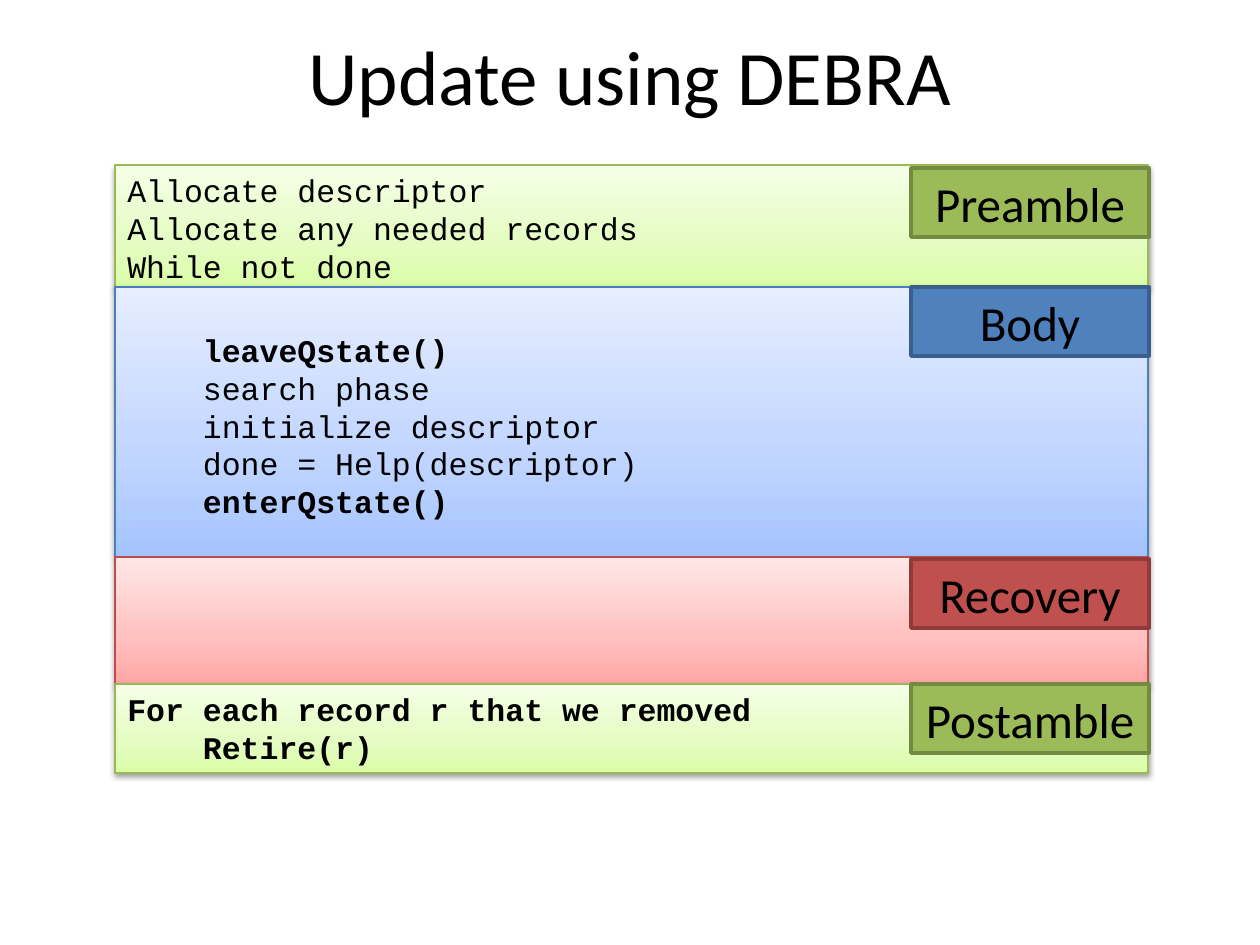
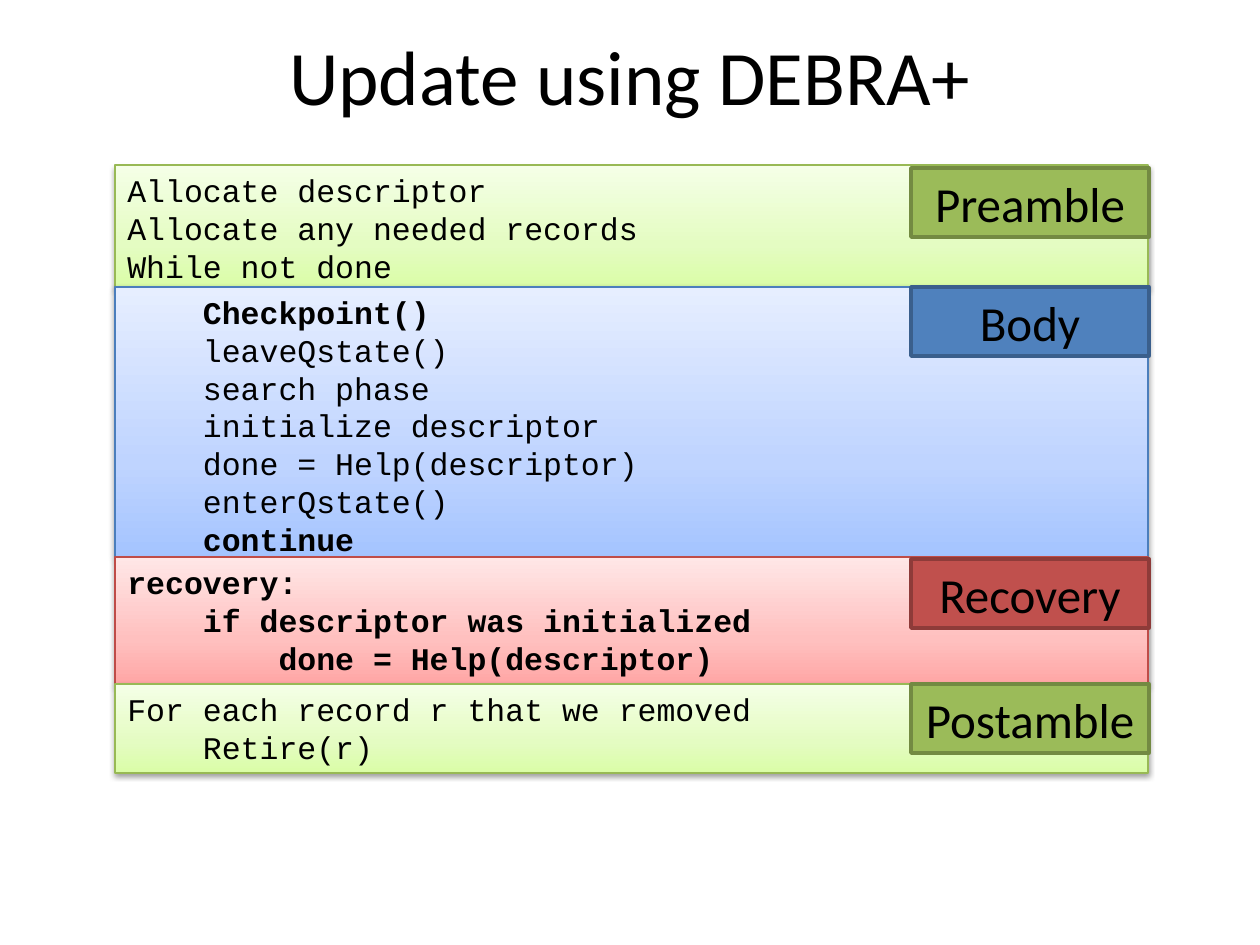
from copy import deepcopy
from typing import NamedTuple

from lxml.etree import SubElement
from pptx import Presentation
from pptx.dml.color import RGBColor
from pptx.enum.shapes import MSO_SHAPE as Preset
from pptx.enum.text import MSO_ANCHOR as Anchor, PP_ALIGN as Align
from pptx.oxml.ns import qn
from pptx.util import Emu, Pt

PX = 914400 / 126
BLACK = RGBColor(0x00, 0x00, 0x00)
TITLE_FONT = "Calibri"
CODE_FONT = "Courier New"
CODE_SIZE = 18
CODE_INDENT = Pt(4 * 0.6 * CODE_SIZE)  # four characters of the code font
CODE_LINE_HEIGHT = 38
CODE_PADDING = 6

BAND_LEFT, BAND_TOP, BAND_WIDTH = 115, 165, 1033
TAG_LEFT, TAG_WIDTH, TAG_HEIGHT = 911, 238, 69
GRADIENT_POSITIONS = (0, 0.35, 1)


class Palette(NamedTuple):
    gradient: tuple[RGBColor, RGBColor, RGBColor]
    band_line: RGBColor
    tag_fill: RGBColor
    tag_line: RGBColor


class Section(NamedTuple):
    name: str
    height: int
    tag_drop: int
    palette: Palette


class Line(NamedTuple):
    text: str
    level: int = 0
    bold: bool = False


class Code(NamedTuple):
    lines: list[Line]
    skipped: int = 0


class Page(NamedTuple):
    title: str
    codes: list[Code]


GREEN = Palette(
    (RGBColor(0xDA, 0xFD, 0xA7), RGBColor(0xE4, 0xFC, 0xC2), RGBColor(0xF5, 0xFF, 0xE7)),
    RGBColor(0x98, 0xB9, 0x55), RGBColor(0x9B, 0xBB, 0x59), RGBColor(0x73, 0x8A, 0x42))
BLUE = Palette(
    (RGBColor(0xA4, 0xC4, 0xFF), RGBColor(0xBF, 0xD4, 0xFF), RGBColor(0xE6, 0xEE, 0xFF)),
    RGBColor(0x4B, 0x7E, 0xBC), RGBColor(0x4F, 0x81, 0xBD), RGBColor(0x3A, 0x5F, 0x8C))
RED = Palette(
    (RGBColor(0xFF, 0xA6, 0xA5), RGBColor(0xFF, 0xC0, 0xBF), RGBColor(0xFF, 0xE7, 0xE7)),
    RGBColor(0xBF, 0x4C, 0x48), RGBColor(0xC0, 0x50, 0x4D), RGBColor(0x8E, 0x3B, 0x39))

SECTIONS = [
    Section("Preamble", 122, 3, GREEN),
    Section("Body", 270, 0, BLUE),
    Section("Recovery", 127, 2, RED),
    Section("Postamble", 89, 0, GREEN),
]

PREAMBLE = Code([Line("Allocate descriptor"), Line("Allocate any needed records"),
                 Line("While not done")])


def update_steps(bold_qstate: bool) -> list[Line]:
    return [
        Line("leaveQstate()", 1, bold_qstate),
        Line("search phase", 1),
        Line("initialize descriptor", 1),
        Line("done = Help(descriptor)", 1),
        Line("enterQstate()", 1, bold_qstate),
    ]


def postamble(bold: bool) -> Code:
    return Code([Line("For each record r that we removed", 0, bold),
                 Line("Retire(r)", 1, bold)])


PAGES = [
    Page("Update using DEBRA", [
        PREAMBLE,
        Code(update_steps(True), skipped=1),
        Code([]),
        postamble(True),
    ]),
    Page("Update using DEBRA+", [
        PREAMBLE,
        Code([Line("Checkpoint()", 1, True), *update_steps(False),
              Line("continue", 1, True)]),
        Code([Line("recovery:", 0, True),
              Line("if descriptor was initialized", 1, True),
              Line("done = Help(descriptor)", 2, True)]),
        postamble(False),
    ]),
]


def px(length: int) -> Emu:
    return Emu(round(length * PX))


def area(left: int, top: int, width: int, height: int) -> list[Emu]:
    return [px(length) for length in (left, top, width, height)]


def style_font(para, name: str, size: int, bold: bool = False) -> None:
    for span in para.runs:
        span.font.name = name
        span.font.size = Pt(size)
        span.font.bold = bold
        span.font.color.rgb = BLACK


def set_label(box, text: str, size: int) -> None:
    """Centre one line of text in a box, both ways."""
    frame = box.text_frame
    frame.word_wrap = True
    frame.vertical_anchor = Anchor.MIDDLE
    frame.text = text
    para = frame.paragraphs[0]
    para.alignment = Align.CENTER
    style_font(para, TITLE_FONT, size)


def set_code(box, code: Code) -> None:
    frame = box.text_frame
    frame.word_wrap = True
    frame.vertical_anchor = Anchor.TOP
    frame.margin_top = px(CODE_PADDING + code.skipped * CODE_LINE_HEIGHT)
    frame.text = "\n".join(line.text for line in code.lines)
    for para, line in zip(frame.paragraphs, code.lines):
        para.alignment = Align.LEFT
        properties = para._p.get_or_add_pPr()
        properties.set("marL", str(line.level * CODE_INDENT))
        properties.set("indent", "0")
        style_font(para, CODE_FONT, CODE_SIZE, line.bold)


def fill_gradient(shape, colors: tuple[RGBColor, ...]) -> None:
    """Fill with three colours running from bottom to top."""
    shape.fill.gradient()
    shape.fill.gradient_angle = 90
    stop_list = shape._element.spPr.find(qn("a:gradFill")).find(qn("a:gsLst"))
    stop_list.append(deepcopy(stop_list[-1]))
    for stop, position, color in zip(shape.fill.gradient_stops, GRADIENT_POSITIONS, colors):
        stop.position = position
        stop.color.rgb = color


def add_soft_shadow(shape) -> None:
    effects = shape._element.spPr.find(qn("a:effectLst"))
    shadow = SubElement(effects, qn("a:outerShdw"), blurRad="40000", dist="20000",
                        dir="5400000", rotWithShape="0")
    color = SubElement(shadow, qn("a:srgbClr"), val="000000")
    SubElement(color, qn("a:alpha"), val="38000")


def add_rectangle(page, place: list[Emu], line_color: RGBColor, line_width: float):
    shape = page.shapes.add_shape(Preset.RECTANGLE, *place)
    shape.shadow.inherit = False
    shape.line.color.rgb = line_color
    shape.line.width = Pt(line_width)
    return shape


def add_band(page, section: Section, top: int, code: Code) -> None:
    band = add_rectangle(page, area(BAND_LEFT, top, BAND_WIDTH, section.height),
                         section.palette.band_line, 0.75)
    fill_gradient(band, section.palette.gradient)
    add_soft_shadow(band)
    set_code(band, code)


def add_tag(page, section: Section, top: int) -> None:
    tag = add_rectangle(page, area(TAG_LEFT, top + section.tag_drop, TAG_WIDTH, TAG_HEIGHT),
                        section.palette.tag_line, 2)
    tag.fill.solid()
    tag.fill.fore_color.rgb = section.palette.tag_fill
    set_label(tag, section.name, 28)


def add_page(deck, content: Page) -> None:
    page = deck.slides.add_slide(deck.slide_layouts[6])
    tops = [BAND_TOP + sum(section.height for section in SECTIONS[:index])
            for index in range(len(SECTIONS))]
    for section, top, code in zip(SECTIONS, tops, content.codes):
        add_band(page, section, top, code)
    set_label(page.shapes.add_textbox(*area(63, 16, 1134, 117)), content.title, 44)
    for section, top in zip(SECTIONS, tops):
        add_tag(page, section, top)


def main() -> None:
    deck = Presentation()
    deck.slide_width, deck.slide_height = px(1260), px(945)
    for content in PAGES:
        add_page(deck, content)
    deck.save("out.pptx")


if __name__ == "__main__":
    main()
